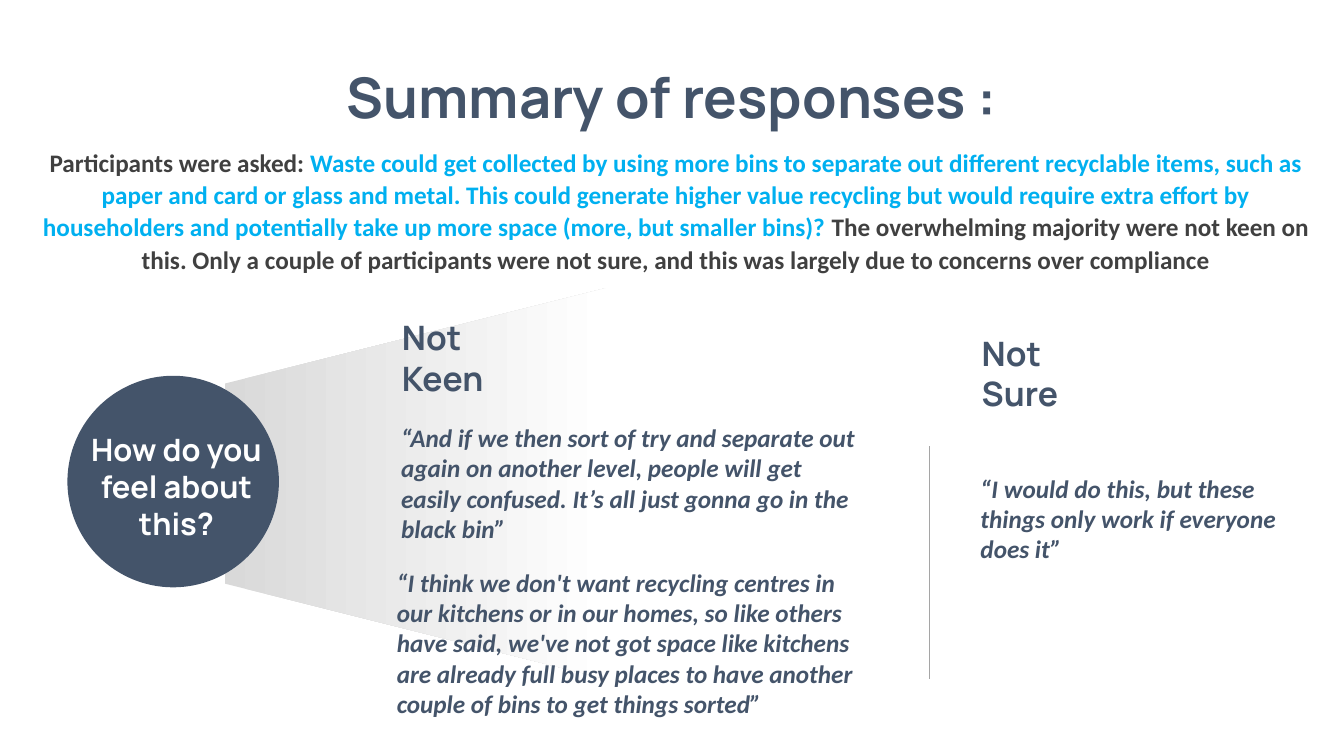
from typing import NamedTuple

import pptx
import pptx.dml.color
import pptx.enum.shapes
import pptx.enum.text
import pptx.oxml.ns
import pptx.util
from lxml import etree

Cm, Pt = pptx.util.Cm, pptx.util.Pt
ALIGN = pptx.enum.text.PP_ALIGN
SHAPE = pptx.enum.shapes.MSO_SHAPE

COLORS = {
    "navy": "44546A",
    "dark": "404040",
    "blue": "00B0F0",
    "grey": "D9D9D9",
    "rule": "A5A5A5",
    "white": "FFFFFF",
}


class Style(NamedTuple):
    font: str
    size: int
    italic: bool = False
    align: ALIGN = ALIGN.LEFT
    wrap: bool = True
    line_spacing: float = 1.0
    space_after: int = 0


class TextBox(NamedTuple):
    left: float
    top: float
    width: float
    height: float
    style: Style
    runs: list[tuple[str, str]]


TITLE = Style("Manrope", 40, align=ALIGN.CENTER, wrap=False)
INTRO = Style("Calibri", 18, align=ALIGN.CENTER, line_spacing=1.07, space_after=8)
HEADING = Style("Manrope", 24)
QUESTION = Style("Manrope", 22, align=ALIGN.CENTER)
QUOTE = Style("Calibri", 18, italic=True)

TEXTS = [
    TextBox(7.85, 1.45, 18.16, 1.96, TITLE, [("Summary of responses :", "navy")]),
    TextBox(0.58, 3.53, 32.92, 3.51, INTRO, [
        ("Participants were asked: ", "dark"),
        ("Waste could get collected by using more bins to separate out different "
         "recyclable items, such as paper and card or glass and metal. This could "
         "generate higher value recycling but would require extra effort by "
         "householders and potentially take up more space (more, but smaller bins)? ",
         "blue"),
        ("The overwhelming majority were not keen on this. Only a couple of "
         "participants were not sure, and this was largely due to concerns over "
         "compliance", "dark"),
    ]),
    TextBox(1.78, 10.74, 5.33, 3.07, QUESTION, [("How do you feel about this?", "white")]),
    TextBox(9.88, 7.87, 3.86, 2.31, HEADING, [("Not Keen", "navy")]),
    TextBox(9.86, 10.52, 12.14, 3.33, QUOTE, [
        ("“And if we then sort of try and separate out again on another level, people "
         "will get easily confused. It’s all just gonna go in the black bin”", "navy"),
    ]),
    TextBox(9.75, 14.17, 12.27, 4.11, QUOTE, [
        ("“I think we don't want recycling centres in our kitchens or in our homes, so "
         "like others have said, we've not got space like kitchens are already full "
         "busy places to have another couple of bins to get things sorted”", "navy"),
    ]),
    TextBox(24.49, 8.26, 3.86, 2.31, HEADING, [("Not Sure", "navy")]),
    TextBox(24.46, 11.79, 8.74, 2.57, QUOTE, [
        ("“I would do this, but these things only work if everyone does it”", "navy"),
    ]),
]


def rgb(name: str) -> pptx.dml.color.RGBColor:
    return pptx.dml.color.RGBColor.from_string(COLORS[name])


def add_text(s: pptx.slide.Slide, box: TextBox) -> None:
    style = box.style
    shape = s.shapes.add_textbox(Cm(box.left), Cm(box.top), Cm(box.width), Cm(box.height))
    tf = shape.text_frame
    tf.word_wrap = style.wrap
    tf.auto_size = pptx.enum.text.MSO_AUTO_SIZE.SHAPE_TO_FIT_TEXT
    p = tf.paragraphs[0]
    p.alignment = style.align
    p.line_spacing = style.line_spacing
    p.space_after = Pt(style.space_after)
    for text, color in box.runs:
        r = p.add_run()
        r.text = text
        r.font.name = style.font
        r.font.size = Pt(style.size)
        r.font.bold = True
        r.font.italic = style.italic
        r.font.color.rgb = rgb(color)


def add_beam(s: pptx.slide.Slide) -> None:
    sp = s.shapes.add_shape(SHAPE.TRAPEZOID, Cm(5.56), Cm(7.37), Cm(9.86), Cm(9.63))
    sp.rotation = 270
    sp.shadow.inherit = False
    sp.line.fill.background()
    sp.fill.gradient()
    sp.fill.gradient_angle = 270
    for stop, color in zip(sp.fill.gradient_stops, ("grey", "white")):
        stop.color.rgb = rgb(color)


def add_circle(s: pptx.slide.Slide) -> None:
    sp = s.shapes.add_shape(SHAPE.OVAL, Cm(1.7), Cm(9.47), Cm(5.33), Cm(5.33))
    sp.shadow.inherit = False
    sp.line.fill.background()
    sp.fill.solid()
    sp.fill.fore_color.rgb = rgb("navy")


def add_divider(s: pptx.slide.Slide) -> None:
    line = s.shapes.add_connector(
        pptx.enum.shapes.MSO_CONNECTOR.STRAIGHT, Cm(23.42), Cm(11.25), Cm(23.42), Cm(17.12))
    line.line.color.rgb = rgb("rule")
    line.line.width = Pt(0.5)
    etree.SubElement(line._element.spPr, pptx.oxml.ns.qn("a:effectLst"))


def main() -> None:
    prs = pptx.Presentation()
    prs.slide_width, prs.slide_height = Cm(33.87), Cm(19.05)
    s = prs.slides.add_slide(prs.slide_layouts[6])

    # Beam opening out of the question circle
    add_beam(s)
    add_circle(s)

    # Title, introduction, question and answers
    for box in TEXTS:
        add_text(s, box)

    # Rule between the two answers
    add_divider(s)

    prs.save("out.pptx")


if __name__ == "__main__":
    main()
